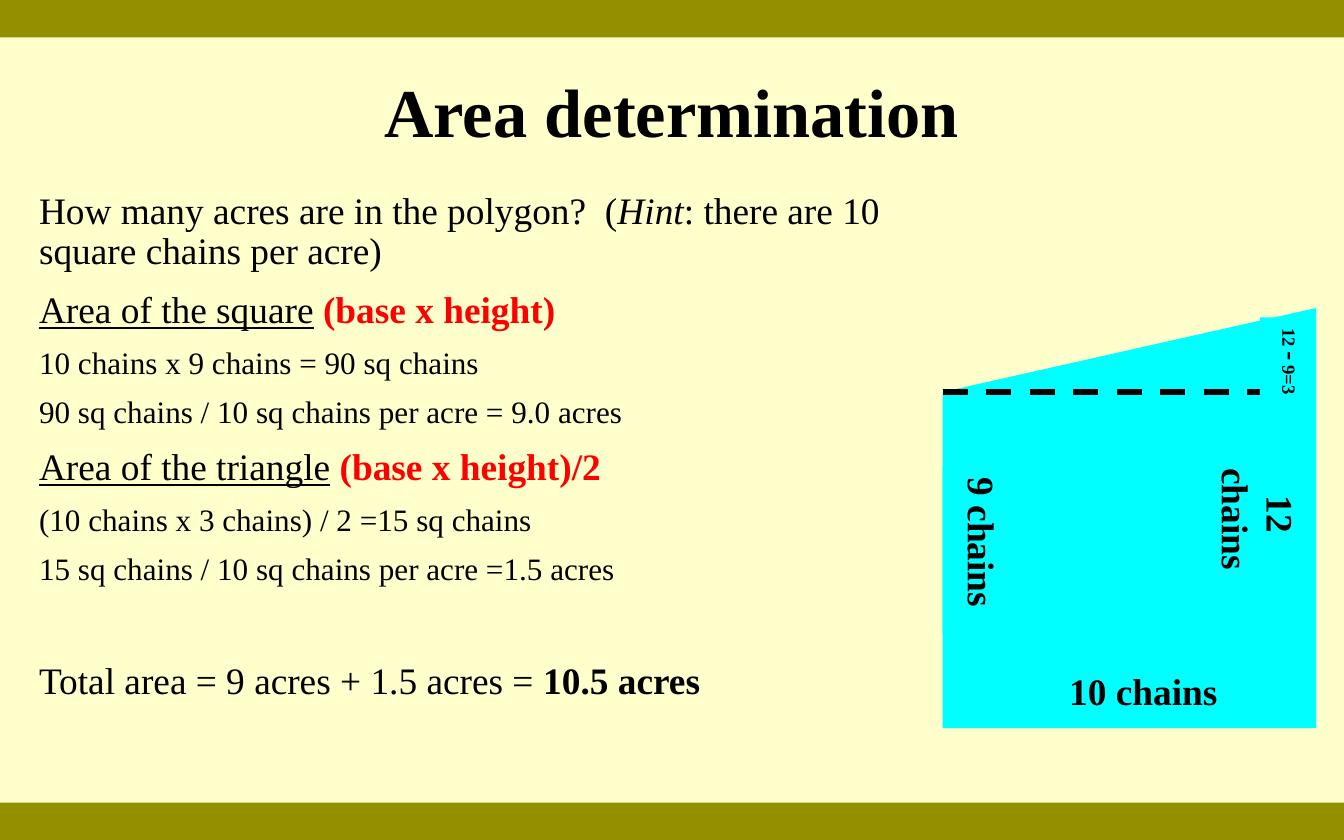
from dataclasses import dataclass

from lxml import etree
from pptx import Presentation
from pptx.dml.color import RGBColor
from pptx.enum.dml import MSO_LINE
from pptx.enum.shapes import MSO_CONNECTOR, MSO_SHAPE
from pptx.enum.text import MSO_ANCHOR, MSO_AUTO_SIZE, PP_ALIGN
from pptx.oxml.ns import qn
from pptx.util import Inches, Pt

RECT = MSO_SHAPE.RECTANGLE
SLANTED = MSO_SHAPE.FLOWCHART_MANUAL_INPUT
STRAIGHT = MSO_CONNECTOR.STRAIGHT
DASH = MSO_LINE.DASH
TOP = MSO_ANCHOR.TOP
GROW = MSO_AUTO_SIZE.SHAPE_TO_FIT_TEXT
CENTER, LEFT = PP_ALIGN.CENTER, PP_ALIGN.LEFT

CELL = Inches(1 / 12)  # the slide is a grid of 144 columns by 90 rows
COLUMNS, ROWS = 144, 90


@dataclass(frozen=True)
class Theme:
    font: str = "Times New Roman"
    page: RGBColor = RGBColor(0xFF, 0xFF, 0xCC)
    band: RGBColor = RGBColor(0x93, 0x90, 0x00)
    land: RGBColor = RGBColor(0x00, 0xFF, 0xFF)
    ink: RGBColor = RGBColor(0x00, 0x00, 0x00)
    formula: RGBColor = RGBColor(0xFF, 0x00, 0x00)
    title: int = 44
    lead: int = 24
    step: int = 20
    minus: int = 18
    small: int = 12


THEME = Theme()


@dataclass(frozen=True)
class Box:
    left: float
    top: float
    width: float
    height: float

    def inner(self, left, top, width, height):
        return Box(self.left + left, self.top + top, width, height)

    def lengths(self):
        return [int(n * CELL) for n in (self.left, self.top, self.width, self.height)]


def add_run(paragraph, text, size, color=THEME.ink, bold=False, italic=False, underline=False):
    run = paragraph.add_run()
    run.text = text
    font = run.font
    font.name, font.size, font.color.rgb = THEME.font, Pt(size), color
    font.bold, font.italic, font.underline = bold, italic, underline


def add_block(shapes, box, fill, preset=RECT):
    block = shapes.add_shape(preset, *box.lengths())
    block.shadow.inherit = False
    block.fill.solid()
    block.fill.fore_color.rgb = fill
    block.line.fill.background()
    return block


def add_label(shapes, box, runs, vertical=False):
    frame = add_block(shapes, box, THEME.land).text_frame
    frame.word_wrap, frame.auto_size, frame.vertical_anchor = True, GROW, TOP
    if vertical:
        frame._txBody.bodyPr.set("vert", "eaVert")
    paragraph = frame.paragraphs[0]
    paragraph.alignment = CENTER
    for text, size in runs:
        add_run(paragraph, text, size, bold=True)


def add_bands(shapes, page, depth=4):
    for top in (0, page.height - depth):
        add_block(shapes, page.inner(0, top, page.width, depth), THEME.band)


def add_title(shapes, box, text):
    frame = shapes.add_textbox(*box.lengths()).text_frame
    frame.word_wrap, frame.vertical_anchor = True, TOP
    frame.margin_top = Inches(0.12)
    paragraph = frame.paragraphs[0]
    paragraph.alignment = CENTER
    add_run(paragraph, text, THEME.title, bold=True)


def add_solution(shapes, box):
    frame = shapes.add_textbox(*box.lengths()).text_frame
    frame.word_wrap = True
    lead, step = THEME.lead, THEME.step

    def heading(name, formula):
        return lead, lead / 2, [
            (name, {"underline": True}),
            (" ", {}),
            (formula, {"color": THEME.formula, "bold": True}),
        ]

    def working(text):
        return step, step / 2, [(text, {})]

    # Each line: type size, space before, runs
    lines = [
        (lead, 0, [
            ("How many acres are in the polygon?  (", {}),
            ("Hint", {"italic": True}),
            (": there are 10 square chains per acre)", {}),
        ]),
        heading("Area of the square", "(base x height)"),
        working("10 chains x 9 chains = 90 sq chains"),
        working("90 sq chains / 10 sq chains per acre = 9.0 acres"),
        heading("Area of the triangle", "(base x height)/2"),
        working("(10 chains x 3 chains) / 2 =15 sq chains"),
        working("15 sq chains / 10 sq chains per acre =1.5 acres"),
        (lead, 2 * lead, [
            ("Total area = 9 acres + 1.5 acres = ", {}),
            ("10.5 acres", {"bold": True}),
        ]),
    ]
    for index, (size, gap, runs) in enumerate(lines):
        paragraph = frame.add_paragraph() if index else frame.paragraphs[0]
        paragraph.alignment = LEFT
        paragraph.line_spacing = 0.9
        paragraph.space_before = Pt(gap)
        for text, style in runs:
            add_run(paragraph, text, size, **style)


def add_polygon(slide_shapes, box):
    shapes = slide_shapes.add_group_shape().shapes
    add_block(shapes, box, THEME.land, SLANTED)

    # Lengths of the sides
    lead = THEME.lead
    add_label(shapes, box.inner(12, 38, 19, 6), [("10 chains", lead)])
    add_label(shapes, box.inner(0, 17, 7.3, 18), [("9 chains", lead)], vertical=True)
    add_label(shapes, box.inner(32, 16, 7.3, 19), [("12  chains", lead)], vertical=True)

    # Border between square and triangle
    left, top, width, _ = box.inner(0, box.height / 5, box.width, 0).lengths()
    border = shapes.add_connector(STRAIGHT, left, top, left + width, top)
    border.line.color.rgb = THEME.ink
    border.line.width = Pt(4)
    border.line.dash_style = DASH
    etree.SubElement(border._element.spPr, qn("a:effectLst"))

    # Height of the triangle
    add_label(slide_shapes, box.inner(34, 1, 6, 10),
              [("12 ", THEME.small), ("-", THEME.minus), (" 9=3", THEME.small)],
              vertical=True)


def main():
    deck = Presentation()
    deck.slide_width, deck.slide_height = COLUMNS * CELL, ROWS * CELL
    slide = deck.slides.add_slide(deck.slide_layouts[6])
    slide.background.fill.solid()
    slide.background.fill.fore_color.rgb = THEME.page

    page = Box(0, 0, COLUMNS, ROWS)
    add_bands(slide.shapes, page)
    add_title(slide.shapes, page.inner(0, 6, COLUMNS, 8), "Area determination")
    add_solution(slide.shapes, page.inner(3, 20, 98, 59.6))
    add_polygon(slide.shapes, page.inner(101, 33, 40, 45))
    deck.save("out.pptx")


if __name__ == "__main__":
    main()
